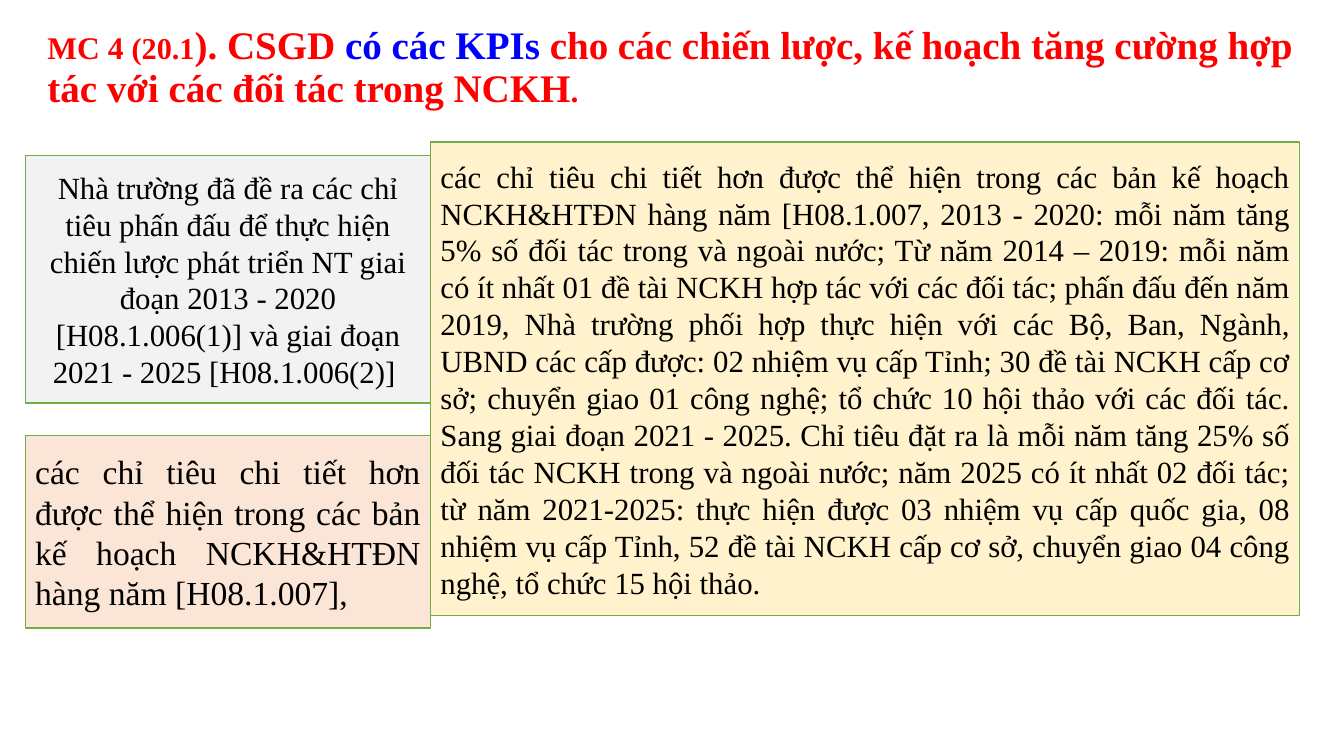
from dataclasses import dataclass

from pptx import Presentation
from pptx.dml.color import RGBColor
from pptx.enum import shapes, text
from pptx.util import Inches, Pt

FONT = "Times New Roman"
RED, BLUE, GREEN, BLACK = "FF0000", "0000FF", "70AD47", "000000"


@dataclass
class Panel:
    left: float
    top: float
    width: float
    height: float
    fill: str
    size: float
    align: text.PP_ALIGN
    words: str


@dataclass
class TitleRun:
    words: str
    size: float
    color: str = RED


TITLE = [
    TitleRun("MC 4 ", 22.5),
    TitleRun("(20.1", 21.6),
    TitleRun("). CSGD ", 27.9),
    TitleRun("có các KPIs ", 27.9, BLUE),
    TitleRun("cho các chiến lược, kế hoạch tăng cường hợp tác với các đối tác "
             "trong NCKH", 27.9),
    TitleRun(".", 22.5),
]

PANELS = [
    Panel(0.25, 1.54, 4.02, 2.46, "F2F2F2", 22, text.PP_ALIGN.CENTER,
          "Nhà trường đã đề ra các chỉ tiêu phấn đấu để thực hiện chiến lược "
          "phát triển NT giai đoạn 2013 - 2020 [H08.1.006(1)] và giai đoạn "
          "2021 - 2025 [H08.1.006(2)] "),
    Panel(4.27, 1.41, 8.62, 4.7, "FFF2CC", 22, text.PP_ALIGN.JUSTIFY,
          "các chỉ tiêu chi tiết hơn được thể hiện trong các bản kế hoạch "
          "NCKH&HTĐN hàng năm [H08.1.007, 2013 - 2020: mỗi năm tăng 5% số đối "
          "tác trong và ngoài nước; Từ năm 2014 – 2019: mỗi năm có ít nhất 01 "
          "đề tài NCKH hợp tác với các đối tác; phấn đấu đến năm 2019, Nhà "
          "trường phối hợp thực hiện với các Bộ, Ban, Ngành, UBND các cấp "
          "được: 02 nhiệm vụ cấp Tỉnh; 30 đề tài NCKH cấp cơ sở; chuyển giao "
          "01 công nghệ; tổ chức 10 hội thảo với các đối tác. Sang giai đoạn "
          "2021 - 2025. Chỉ tiêu đặt ra là mỗi năm tăng 25% số đối tác NCKH "
          "trong và ngoài nước; năm 2025 có ít nhất 02 đối tác; từ năm "
          "2021-2025: thực hiện được 03 nhiệm vụ cấp quốc gia, 08 nhiệm vụ "
          "cấp Tỉnh, 52 đề tài NCKH cấp cơ sở, chuyển giao 04 công nghệ, tổ "
          "chức 15 hội thảo."),
    Panel(0.25, 4.32, 4.02, 1.91, "FBE5D6", 24, text.PP_ALIGN.JUSTIFY,
          "các chỉ tiêu chi tiết hơn được thể hiện trong các bản kế hoạch "
          "NCKH&HTĐN hàng năm [H08.1.007], "),
]


def rgb(color: str) -> RGBColor:
    return RGBColor.from_string(color)


def draw_title(slide) -> None:
    sp = slide.shapes.title
    sp.left, sp.top = Inches(0.37), Inches(0.26)
    sp.width, sp.height = Inches(12.59), Inches(1.15)
    tf = sp.text_frame
    tf.word_wrap = True
    tf.auto_size = text.MSO_AUTO_SIZE.NONE
    tf.vertical_anchor = text.MSO_ANCHOR.TOP
    tf.margin_top = 0
    p = tf.paragraphs[0]
    p.alignment = text.PP_ALIGN.LEFT
    p.line_spacing = 0.9
    p.font.name, p.font.bold = FONT, True
    for part in TITLE:
        r = p.add_run()
        r.text = part.words
        r.font.name, r.font.bold = FONT, True
        r.font.size = Pt(part.size)
        r.font.color.rgb = rgb(part.color)


def draw_panel(slide, panel: Panel) -> None:
    sp = slide.shapes.add_shape(
        shapes.MSO_SHAPE.RECTANGLE, Inches(panel.left), Inches(panel.top),
        Inches(panel.width), Inches(panel.height))
    sp.shadow.inherit = False
    sp.fill.solid()
    sp.fill.fore_color.rgb = rgb(panel.fill)
    sp.line.color.rgb = rgb(GREEN)
    sp.line.width = Pt(1)
    tf = sp.text_frame
    tf.word_wrap = True
    tf.vertical_anchor = text.MSO_ANCHOR.MIDDLE
    p = tf.paragraphs[0]
    p.text = panel.words
    p.alignment = panel.align
    p.font.name, p.font.size = FONT, Pt(panel.size)
    p.font.color.rgb = rgb(BLACK)


def main() -> None:
    prs = Presentation()
    prs.slide_width, prs.slide_height = Inches(13.33), Inches(7.5)
    slide = prs.slides.add_slide(prs.slide_layouts[5])
    draw_title(slide)
    for panel in PANELS:
        draw_panel(slide, panel)
    prs.save("out.pptx")


if __name__ == "__main__":
    main()
